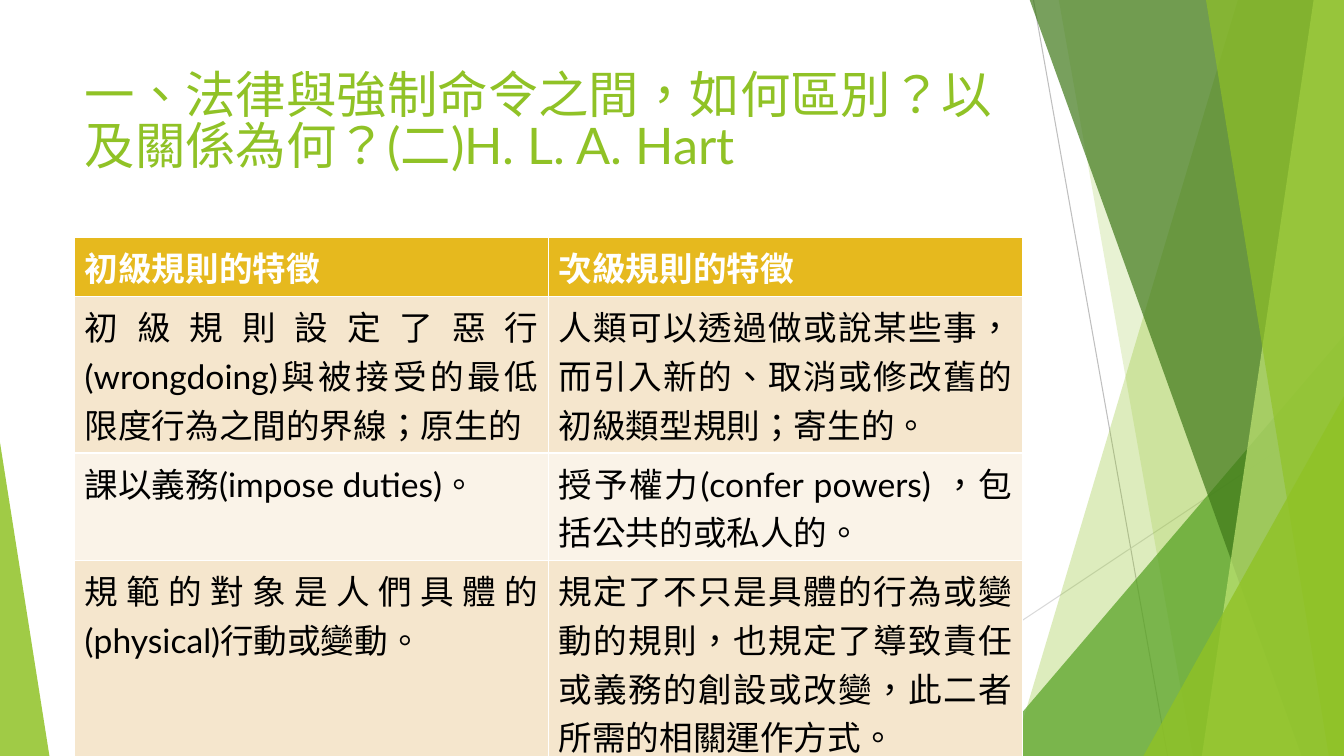
"""Build a slide comparing Hart's primary and secondary rules."""
from lxml import etree
from pptx import Presentation
from pptx import util as u
from pptx.dml.color import RGBColor
from pptx.enum import lang, shapes, text
from pptx.oxml.ns import qn

WIDTH, HEIGHT = 13.33, 7.5
FONT = "Lato"
WHITE = RGBColor(0xFF, 0xFF, 0xFF)
BLACK = RGBColor(0x00, 0x00, 0x00)
LIME = RGBColor(0x90, 0xC2, 0x26)
PALE_LIME = RGBColor(0xC0, 0xE4, 0x74)
GREEN = RGBColor(0x54, 0xA0, 0x21)
DARK_GREEN = RGBColor(0x3F, 0x78, 0x19)
GOLD = RGBColor(0xE6, 0xB9, 0x1E)
SAND = RGBColor(0xF5, 0xE6, 0xCD)
CREAM = RGBColor(0xFA, 0xF3, 0xE8)
GREY = RGBColor(0xBF, 0xBF, 0xBF)
LIGHT_GREY = RGBColor(0xD9, 0xD9, 0xD9)

TITLE = "一、法律與強制命令之間，如何區別？以及關係為何？(二)H. L. A. Hart"
RULES = [
    ("初級規則的特徵", "次級規則的特徵"),
    ("初級規則設定了惡行(wrongdoing)與被接受的最低限度行為之間的界線；原生的",
     "人類可以透過做或說某些事，而引入新的、取消或修改舊的初級類型規則；寄生的。"),
    ("課以義務(impose duties)。",
     "授予權力(confer powers) ，包括公共的或私人的。"),
    ("規範的對象是人們具體的(physical)行動或變動。",
     "規定了不只是具體的行為或變動的規則，也規定了導致責任或義務的創設或改變，此二者所需的相關運作方式。"),
]


class SlideBuilder:
    """Hold the slide and draw its elements in one style."""

    def __init__(self, prs):
        self.s = prs.slides.add_slide(prs.slide_layouts[5])

    def line(self, x1, y1, x2, y2, color):
        """Draw a thin straight line."""
        c = self.s.shapes.add_connector(
            shapes.MSO_CONNECTOR.STRAIGHT,
            u.Inches(x1), u.Inches(y1), u.Inches(x2), u.Inches(y2))
        c.line.color.rgb = color
        c.line.width = u.Pt(0.75)
        etree.SubElement(c.element.spPr, qn("a:effectLst"))

    def tint(self, sp, color, opacity):
        """Fill a shape with a translucent colour and no outline."""
        sp.shadow.inherit = False
        sp.line.fill.background()
        sp.fill.solid()
        sp.fill.fore_color.rgb = color
        clr = sp.element.spPr.find(".//" + qn("a:srgbClr"))
        etree.SubElement(clr, qn("a:alpha"), val=str(opacity * 1000))

    def band(self, top_x, bottom_x, color, opacity):
        """Draw a slanted band that reaches the right edge."""
        top = -0.01
        corners = [(WIDTH, top), (WIDTH, HEIGHT), (bottom_x, HEIGHT)]
        fb = self.s.shapes.build_freeform(u.Inches(top_x), u.Inches(top))
        fb.add_line_segments([(u.Inches(x), u.Inches(y)) for x, y in corners])
        self.tint(fb.convert_to_shape(), color, opacity)

    def triangle(self, left, top, width, apex, color, opacity):
        """Draw a triangle that stands on the bottom edge."""
        sp = self.s.shapes.add_shape(
            shapes.MSO_SHAPE.ISOSCELES_TRIANGLE, u.Inches(left),
            u.Inches(top), u.Inches(width), u.Inches(HEIGHT - top))
        sp.adjustments[0] = apex
        self.tint(sp, color, opacity)

    def label(self, tf, content, size, color, align, bold=False):
        """Set the text of a frame and format its run."""
        tf.text = content
        p = tf.paragraphs[0]
        p.alignment = align
        font = p.runs[0].font
        font.name, font.size, font.bold = FONT, u.Pt(size), bold
        font.color.rgb = color
        font.language_id = lang.MSO_LANGUAGE_ID.TRADITIONAL_CHINESE

    def title(self, content, left, top, width, height):
        """Place the title above the decoration."""
        sp = self.s.shapes.title
        sp.left, sp.top = u.Inches(left), u.Inches(top)
        sp.width, sp.height = u.Inches(width), u.Inches(height)
        tf = sp.text_frame
        self.label(tf, content, 36, LIME, text.PP_ALIGN.LEFT)
        tf.word_wrap = True
        tf.auto_size = text.MSO_AUTO_SIZE.NONE
        tf.vertical_anchor = text.MSO_ANCHOR.TOP
        tf.paragraphs[0].line_spacing = 0.84
        sp.element.getparent().append(sp.element)

    def table(self, rows, left, top, width, row_height):
        """Draw a table with a gold header and alternating rows."""
        tbl = self.s.shapes.add_table(
            len(rows), len(rows[0]), u.Inches(left), u.Inches(top),
            u.Inches(width), u.Inches(row_height * len(rows))).table
        for i, row in enumerate(rows):
            header = i == 0
            fill = GOLD if header else (CREAM, SAND)[i % 2]
            color = WHITE if header else BLACK
            align = text.PP_ALIGN.LEFT if header else text.PP_ALIGN.JUSTIFY
            for j, content in enumerate(row):
                cell = tbl.cell(i, j)
                cell.fill.solid()
                cell.fill.fore_color.rgb = fill
                self.label(cell.text_frame, content, 24, color, align, header)


def main():
    """Build and save the slide."""
    prs = Presentation()
    prs.slide_width, prs.slide_height = u.Inches(WIDTH), u.Inches(HEIGHT)
    b = SlideBuilder(prs)
    b.line(10.25, 0, 11.58, HEIGHT, GREY)
    b.line(WIDTH, 4.03, 8.12, HEIGHT, LIGHT_GREY)
    b.band(12.28, 10.04, LIME, 30)
    b.band(10.5, 11.83, LIME, 20)
    b.triangle(9.77, 3.33, 3.56, 1, GREEN, 72)
    b.band(10.21, 12.91, DARK_GREEN, 70)
    b.band(13.03, 11.92, PALE_LIME, 70)
    b.band(11.96, 13.18, LIME, 65)
    b.triangle(11.34, 3.93, 1.99, 1, LIME, 80)
    b.triangle(0, 4.39, 0.49, 0, LIME, 85)
    b.title(TITLE, 0.74, 0.67, 9.4, 1.44)
    b.table(RULES, 0.74, 2.36, 9.4, 0.41)
    prs.save("out.pptx")


if __name__ == "__main__":
    main()
